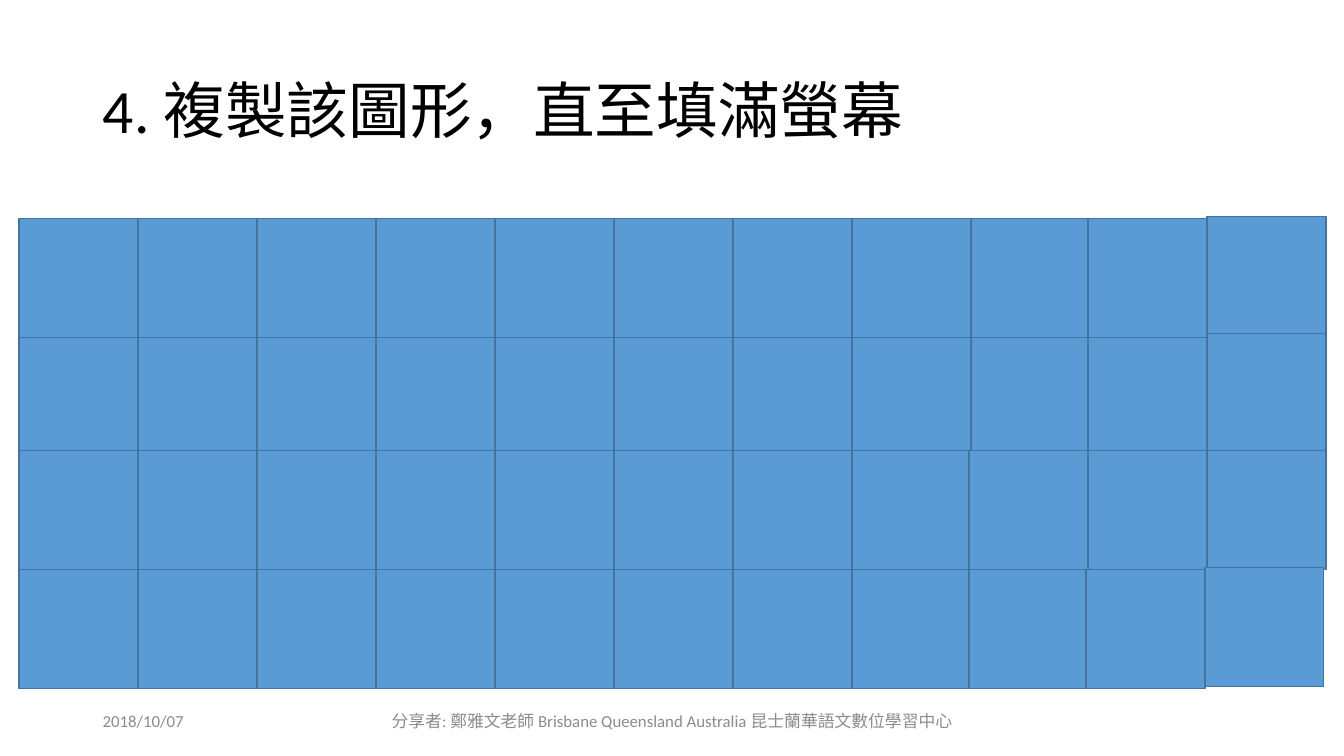
import pptx
import pptx.dml.color
import pptx.enum.shapes
import pptx.enum.text
import pptx.util
from dataclasses import dataclass

Inches = pptx.util.Inches


def colour(code):
    return pptx.dml.color.RGBColor.from_string(code)


@dataclass(frozen=True)
class Theme:
    font: str = "Calibri"
    title_size: int = 44
    footer_size: int = 12
    ink: str = "000000"
    muted: str = "8C8C8C"
    tile: str = "5B9BD5"
    edge: str = "43739E"
    edge_width: int = 1


THEME = Theme()

# Tile wall: an even grid whose last columns are placed slightly by hand
TILE = 1.18
COLUMNS = 11
ROW_TOPS = (0, 1.18, 2.30, 3.48)
LAST_COLUMN_TOPS = (-0.02, 1.14, 2.30, 3.46)
COLUMN_NUDGES = (
    {9: -0.02, 10: -0.02},
    {9: -0.02, 10: -0.02},
    {8: -0.02, 9: -0.02, 10: -0.02},
    {8: -0.02, 9: -0.04, 10: -0.04},
)


def write_text(shape, text, size, code, align):
    frame = shape.text_frame
    frame.word_wrap = True
    frame.auto_size = pptx.enum.text.MSO_AUTO_SIZE.NONE
    frame.vertical_anchor = pptx.enum.text.MSO_ANCHOR.MIDDLE
    para = frame.paragraphs[0]
    para.text = text
    para.alignment = align
    para.font.name = THEME.font
    para.font.size = pptx.util.Pt(size)
    para.font.color.rgb = colour(code)
    return para


def add_title(page, box, text):
    title = page.shapes.title
    title.left, title.top, title.width, title.height = map(Inches, box)
    para = write_text(title, text, THEME.title_size, THEME.ink,
                      pptx.enum.text.PP_ALIGN.LEFT)
    para.line_spacing = 0.9


def add_tile(page, left, top):
    tile = page.shapes.add_shape(
        pptx.enum.shapes.MSO_SHAPE.RECTANGLE,
        Inches(left), Inches(top), Inches(TILE), Inches(TILE))
    tile.shadow.inherit = False
    tile.fill.solid()
    tile.fill.fore_color.rgb = colour(THEME.tile)
    tile.line.color.rgb = colour(THEME.edge)
    tile.line.width = pptx.util.Pt(THEME.edge_width)


def add_tile_wall(page, left, top):
    for row, nudges in enumerate(COLUMN_NUDGES):
        for column in range(COLUMNS):
            is_last = column == COLUMNS - 1
            tops = LAST_COLUMN_TOPS if is_last else ROW_TOPS
            add_tile(page, left + column * TILE + nudges.get(column, 0),
                     top + tops[row])


def add_footer_text(page, box, text, align):
    label = page.shapes.add_textbox(*map(Inches, box))
    write_text(label, text, THEME.footer_size, THEME.muted, align)


def add_footer(page, left, top):
    align = pptx.enum.text.PP_ALIGN
    add_footer_text(page, (left, top, 3, 0.4), "2018/10/07", align.LEFT)
    add_footer_text(
        page, (left + 1.58, top, 8.33, 0.4),
        "分享者: 鄭雅文老師 Brisbane Queensland Australia 昆士蘭華語文數位學習中心",
        align.CENTER)


def main():
    deck = pptx.Presentation()
    deck.slide_width, deck.slide_height = Inches(13.33), Inches(7.5)
    page = deck.slides.add_slide(deck.slide_layouts.get_by_name("Title Only"))
    add_title(page, (0.92, 0.4, 11.5, 1.45), "4. 複製該圖形，直至填滿螢幕")
    add_tile_wall(page, 0.19, 2.17)
    add_footer(page, 0.92, 6.95)
    deck.save("out.pptx")


if __name__ == "__main__":
    main()
